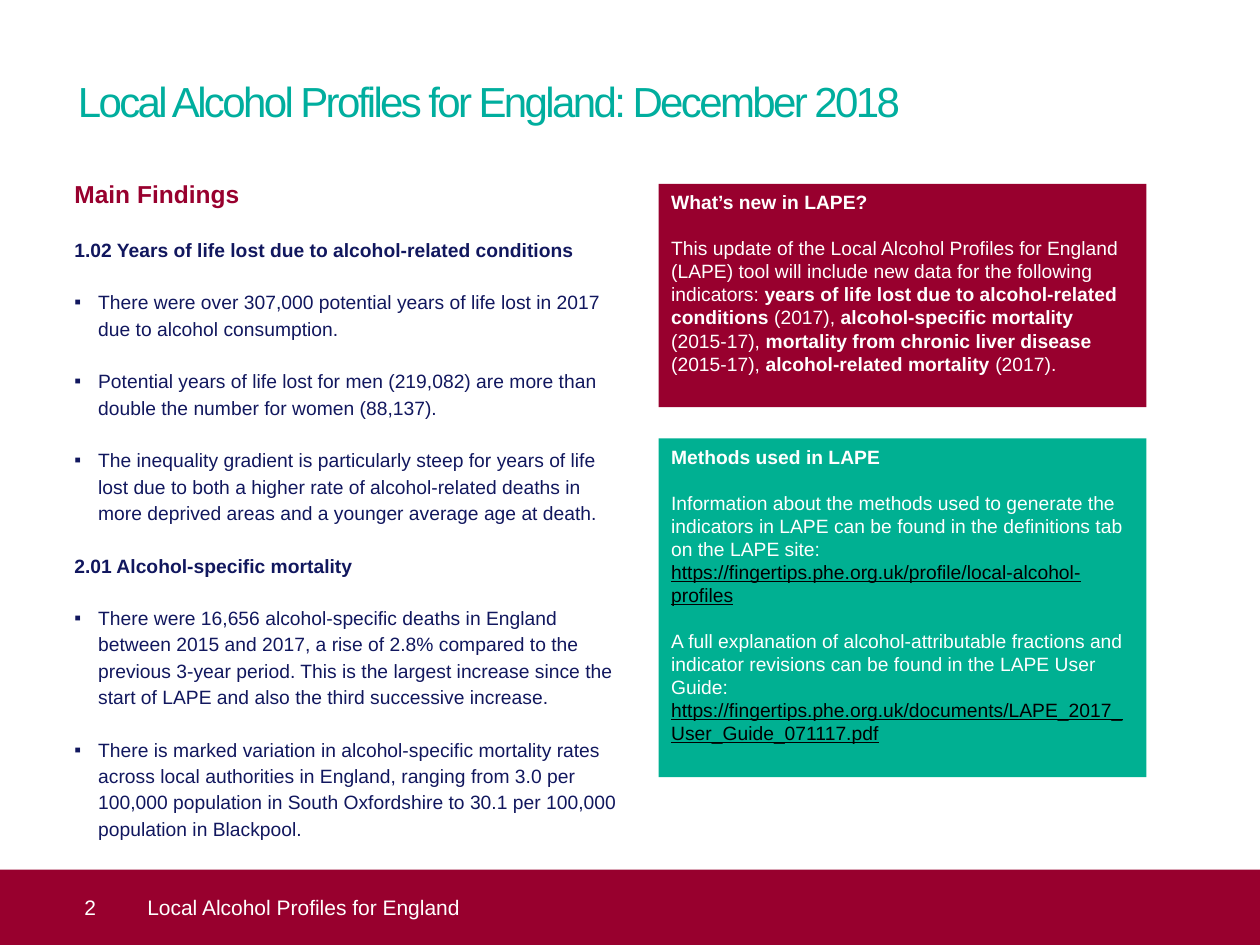
from dataclasses import dataclass

from lxml.etree import SubElement
from pptx import Presentation
from pptx.dml.color import RGBColor
from pptx.enum.shapes import MSO_SHAPE
from pptx.enum.text import MSO_ANCHOR, PP_ALIGN
from pptx.oxml.ns import qn
from pptx.util import Cm, Pt

COLOURS = {
    "title": "00AE9E",
    "crimson": "98002E",
    "green": "00B092",
    "navy": "11175E",
    "white": "FFFFFF",
    "link": "000000",
}
BULLET_INDENT = 0.48


@dataclass(frozen=True)
class Box:
    left: float
    top: float
    width: float
    height: float
    fill: str | None = None
    inset: tuple = (0, 0, 0, 0)
    anchor: MSO_ANCHOR = MSO_ANCHOR.TOP


@dataclass(frozen=True)
class Run:
    text: str
    size: float = 11
    colour: str = "white"
    bold: bool = False
    underline: bool = False
    spacing: float = 0


@dataclass(frozen=True)
class Block:
    runs: tuple
    before: float = 0
    line: float = 1.0
    indent: float = 0
    bullet: bool = False


def add_box(slide, box: Box, blocks: list) -> None:
    """Draw a filled rectangle or a plain text box, with its paragraphs."""
    place = [Cm(value) for value in (box.left, box.top, box.width, box.height)]
    if box.fill:
        shape = slide.shapes.add_shape(MSO_SHAPE.RECTANGLE, *place)
        shape.shadow.inherit = False
        shape.fill.solid()
        shape.fill.fore_color.rgb = RGBColor.from_string(COLOURS[box.fill])
        shape.line.fill.background()
    else:
        shape = slide.shapes.add_textbox(*place)
    frame = shape.text_frame
    left, top, right, bottom = (Cm(value) for value in box.inset)
    frame_format = {
        "margin_left": left, "margin_top": top,
        "margin_right": right, "margin_bottom": bottom,
        "word_wrap": True, "vertical_anchor": box.anchor,
    }
    for name, value in frame_format.items():
        setattr(frame, name, value)
    for index, block in enumerate(blocks):
        paragraph = frame.add_paragraph() if index else frame.paragraphs[0]
        write_block(paragraph, block, first=index == 0)


def write_block(paragraph, block: Block, first: bool) -> None:
    paragraph_format = {
        "alignment": PP_ALIGN.LEFT,
        "line_spacing": block.line,
        "space_before": Pt(0 if first else block.before),
    }
    for name, value in paragraph_format.items():
        setattr(paragraph, name, value)
    properties = paragraph._p.get_or_add_pPr()
    if block.indent:
        properties.set("marL", str(Cm(block.indent)))
    if block.bullet:
        properties.set("indent", str(-Cm(block.indent)))
        SubElement(properties, qn("a:buFont"), typeface="Arial")
        SubElement(properties, qn("a:buChar"), char="▪")
    for part in block.runs:
        run = paragraph.add_run()
        run.text = part.text
        font_format = {
            "name": "Arial", "size": Pt(part.size),
            "bold": part.bold, "underline": part.underline,
        }
        for name, value in font_format.items():
            setattr(run.font, name, value)
        run.font.color.rgb = RGBColor.from_string(COLOURS[part.colour])
        if part.spacing:
            run._r.get_or_add_rPr().set("spc", str(int(part.spacing * 100)))


def finding(text: str, heading: bool = False) -> Block:
    return Block((Run(text, colour="navy", bold=heading),), before=15, line=1.14,
                 indent=0 if heading else BULLET_INDENT, bullet=not heading)


def panel(top: float, height: float, fill: str) -> Box:
    return Box(13.28, top, 9.83, height, fill, (0.25, 0.13, 0.25, 0.13))


def panel_block(*runs: Run) -> Block:
    return Block(runs, before=13)


def strong(text: str) -> Run:
    return Run(text, bold=True)


def link(text: str) -> Run:
    return Run(text, colour="link", underline=True)


FINDINGS = [
    Block((Run("Main Findings", 14, "crimson", True),), line=1.14),
    finding("1.02 Years of life lost due to alcohol-related conditions", heading=True),
    finding("There were over 307,000 potential years of life lost in 2017 due to "
            "alcohol consumption."),
    finding("Potential years of life lost for men (219,082) are more than double "
            "the number for women (88,137)."),
    finding("The inequality gradient is particularly steep for years of life lost due "
            "to both a higher rate of alcohol-related deaths in more deprived areas "
            "and a younger average age at death."),
    finding("2.01 Alcohol-specific mortality", heading=True),
    finding("There were 16,656 alcohol-specific deaths in England between 2015 and "
            "2017, a rise of 2.8% compared to the previous 3-year period. This is the "
            "largest increase since the start of LAPE and also the third successive "
            "increase."),
    finding("There is marked variation in alcohol-specific mortality rates across "
            "local authorities in England, ranging from 3.0 per 100,000 population in "
            "South Oxfordshire to 30.1 per 100,000 population in Blackpool."),
]
WHATS_NEW = [
    panel_block(strong("What’s new in LAPE?")),
    panel_block(
        Run("This update of the Local Alcohol Profiles for England (LAPE) tool will "
            "include new data for the following indicators: "),
        strong("years of life lost due to alcohol-related conditions"),
        Run(" (2017), "), strong("alcohol-specific mortality "),
        Run("(2015-17), "), strong("mortality from chronic liver disease "),
        Run("(2015-17), "), strong("alcohol-related mortality "), Run("(2017)."),
    ),
]
METHODS = [
    panel_block(strong("Methods used in LAPE")),
    panel_block(
        Run("Information about the methods used to generate the indicators in LAPE "
            "can be found in the definitions tab on the LAPE site: "),
        link("https://fingertips.phe.org.uk/profile/local-alcohol-profiles"),
    ),
    panel_block(
        Run("A full explanation of alcohol-attributable fractions and indicator "
            "revisions can be found in the LAPE User Guide: "),
        link("https://fingertips.phe.org.uk/documents/LAPE_2017_User_Guide_071117.pdf"),
    ),
]


def main() -> None:
    presentation = Presentation()
    presentation.slide_width, presentation.slide_height = Cm(25.4), Cm(19.05)
    slide = presentation.slides.add_slide(presentation.slide_layouts[6])

    # Title and findings
    title = Run("Local Alcohol Profiles for England: December 2018", 24, "title",
                spacing=-1.5)
    add_box(slide, Box(1.57, 1.52, 22.3, 1.8), [Block((title,))])
    add_box(slide, Box(1.5, 3.53, 10.95, 13.59), FINDINGS)

    # Footer band with the slide number
    add_box(slide, Box(0, 17.53, 25.4, 1.52, "crimson", anchor=MSO_ANCHOR.MIDDLE),
            [Block((Run("2", 12),), indent=1.7)])

    # Side panels
    add_box(slide, panel(3.71, 4.5, "crimson"), WHATS_NEW)
    add_box(slide, panel(8.84, 6.83, "green"), METHODS)

    # Footer text
    add_box(slide, Box(2.49, 17.53, 22.4, 1.52, anchor=MSO_ANCHOR.MIDDLE),
            [Block((Run("Local Alcohol Profiles for England", 12),),
                   indent=BULLET_INDENT)])
    presentation.save("out.pptx")


if __name__ == "__main__":
    main()
